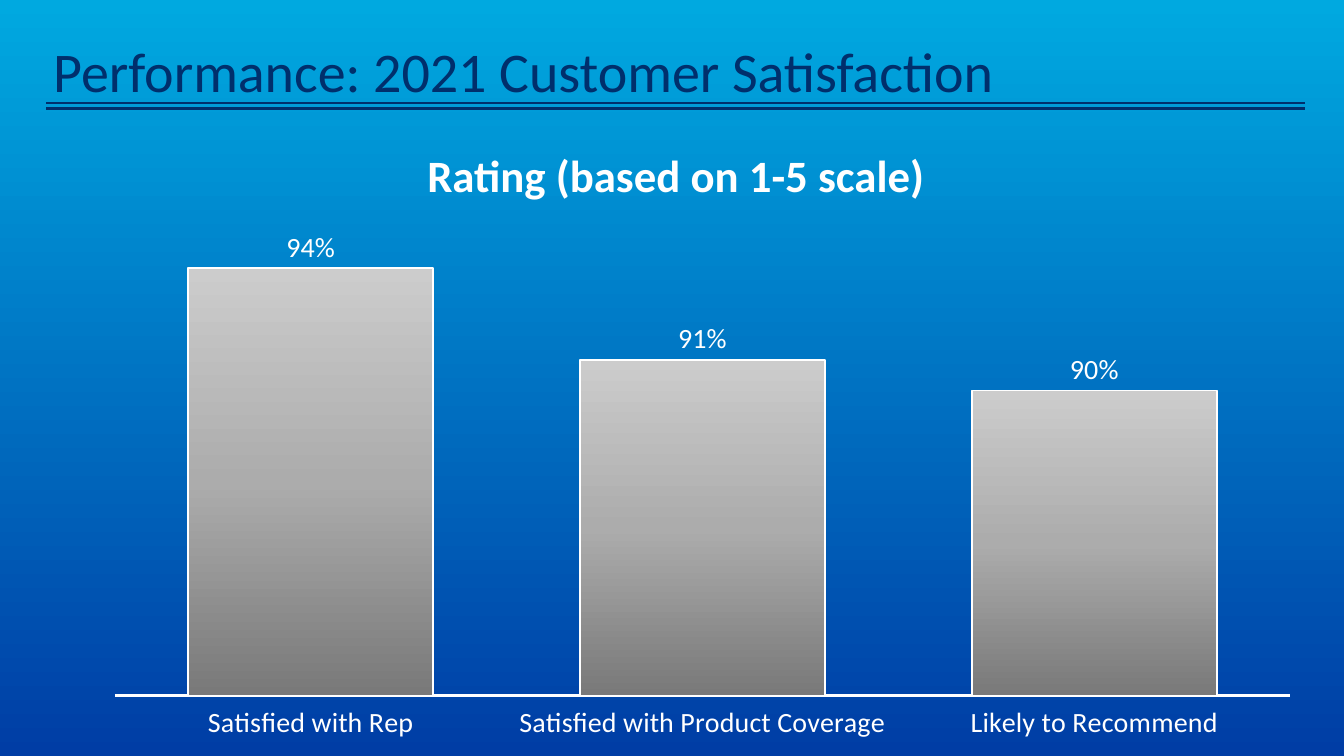
from copy import deepcopy

from lxml import etree
from pptx import Presentation
from pptx.chart.data import CategoryChartData
from pptx.dml.color import RGBColor
from pptx.enum.chart import XL_CHART_TYPE, XL_LABEL_POSITION, XL_TICK_LABEL_POSITION, XL_TICK_MARK
from pptx.enum.shapes import MSO_CONNECTOR
from pptx.enum.text import MSO_ANCHOR, MSO_AUTO_SIZE, PP_ALIGN
from pptx.oxml.ns import qn
from pptx.util import Inches, Pt

COLUMN = XL_CHART_TYPE.COLUMN_CLUSTERED
OUTSIDE_END = XL_LABEL_POSITION.OUTSIDE_END
LABELS_LOW = XL_TICK_LABEL_POSITION.LOW
NO_TICK = XL_TICK_MARK.NONE
STRAIGHT = MSO_CONNECTOR.STRAIGHT
TOP = MSO_ANCHOR.TOP
FIT_SHAPE = MSO_AUTO_SIZE.SHAPE_TO_FIT_TEXT
LEFT, CENTER = PP_ALIGN.LEFT, PP_ALIGN.CENTER

SKY = RGBColor(0x00, 0xA9, 0xE0)
ROYAL = RGBColor(0x00, 0x3D, 0xA5)
NAVY = RGBColor(0x00, 0x2F, 0x6C)
WHITE = RGBColor(0xFF, 0xFF, 0xFF)
DARK_GRAY = RGBColor(0x79, 0x79, 0x79)
MID_GRAY = RGBColor(0xAC, 0xAC, 0xAC)
LIGHT_GRAY = RGBColor(0xCC, 0xCC, 0xCC)

FONT = "Calibri"
SLIDE_W, SLIDE_H = 13.33, 7.5
RULE_LEFT, RULE_RIGHT = 0.46, 12.94
RULES = ((1.02, 1.25), (1.08, 2.25))
RATINGS = {
    "Satisfied with Rep": 0.94,
    "Satisfied with Product Coverage": 0.91,
    "Likely to Recommend": 0.9,
}
PLOT_AREA = {"x": 0.045, "y": 0.037, "w": 0.955, "h": 0.885}


def set_gradient(fill, owner, colors, angle):
    fill.gradient()
    fill.gradient_angle = angle
    stops = owner.find(".//" + qn("a:gsLst"))
    while len(stops) < len(colors):
        stops.append(deepcopy(stops[0]))
    for i, (stop, color) in enumerate(zip(fill.gradient_stops, colors)):
        stop.color.rgb = color
        stop.position = i / (len(colors) - 1)


def add_text(slide, text, box, size, color, bold=False, align=LEFT, spacing=1.0, grow=False):
    tb = slide.shapes.add_textbox(*map(Inches, box))
    tf = tb.text_frame
    tf.word_wrap = True
    tf.vertical_anchor = TOP
    if grow:
        tf.auto_size = FIT_SHAPE
    p = tf.paragraphs[0]
    p.alignment = align
    p.line_spacing = spacing
    r = p.add_run()
    r.text = text
    r.font.name = FONT
    r.font.size = Pt(size)
    r.font.bold = bold
    r.font.color.rgb = color


def add_rule(slide, y, width):
    x1, x2, y = Inches(RULE_LEFT), Inches(RULE_RIGHT), Inches(y)
    line = slide.shapes.add_connector(STRAIGHT, x1, y, x2, y)
    line.line.color.rgb = NAVY
    line.line.width = Pt(width)
    etree.SubElement(line._element.spPr, qn("a:effectLst"))


def set_plot_area(chart):
    area = chart._chartSpace.find(".//" + qn("c:plotArea"))
    for old in area.findall(qn("c:layout")):
        area.remove(old)
    layout = etree.Element(qn("c:layout"))
    manual = etree.SubElement(layout, qn("c:manualLayout"))
    settings = {"layoutTarget": "inner", "xMode": "edge", "yMode": "edge", **PLOT_AREA}
    for tag, value in settings.items():
        etree.SubElement(manual, qn("c:" + tag)).set("val", str(value))
    area.insert(0, layout)


def add_rating_chart(slide, box):
    data = CategoryChartData(number_format="0%")
    data.categories = list(RATINGS)
    data.add_series("Series 1", list(RATINGS.values()))
    chart = slide.shapes.add_chart(COLUMN, *map(Inches, box), data).chart
    chart.has_title = False
    chart.has_legend = False
    chart.font.name = FONT
    chart.font.size = Pt(20)
    chart.font.color.rgb = WHITE
    set_plot_area(chart)

    cat_axis = chart.category_axis
    cat_axis.major_tick_mark = NO_TICK
    cat_axis.minor_tick_mark = NO_TICK
    cat_axis.tick_label_position = LABELS_LOW
    cat_axis.format.line.color.rgb = WHITE
    cat_axis.format.line.width = Pt(1.75)
    val_axis = chart.value_axis
    val_axis.minimum_scale, val_axis.maximum_scale = 0.8, 0.95
    val_axis.has_major_gridlines = False
    val_axis.visible = False

    plot = chart.plots[0]
    plot.gap_width = 60
    plot.vary_by_categories = False
    plot.has_data_labels = True
    labels = plot.data_labels
    labels.show_value = True
    labels.number_format = "0%"
    labels.number_format_is_linked = False
    labels.position = OUTSIDE_END
    bars = plot.series[0]
    set_gradient(bars.format.fill, bars._element, (DARK_GRAY, MID_GRAY, LIGHT_GRAY), 90)
    bars.format.line.color.rgb = WHITE
    bars.format.line.width = Pt(1.25)


def main():
    prs = Presentation()
    prs.slide_width, prs.slide_height = Inches(SLIDE_W), Inches(SLIDE_H)
    slide = prs.slides.add_slide(prs.slide_layouts[6])
    set_gradient(slide.background.fill, slide._element, (SKY, ROYAL), 270)
    add_text(slide, "Performance: 2021 Customer Satisfaction", (0.43, 0.39, 11.57, 0.94),
             40, NAVY, spacing=0.9)
    for y, width in RULES:
        add_rule(slide, y, width)
    add_rating_chart(slide, (0.59, 2.17, 12.22, 5.17))
    add_text(slide, "Rating (based on 1-5 scale)", (3.26, 1.42, 6.89, 0.64),
             32, WHITE, bold=True, align=CENTER, grow=True)
    prs.save("out.pptx")


if __name__ == "__main__":
    main()
